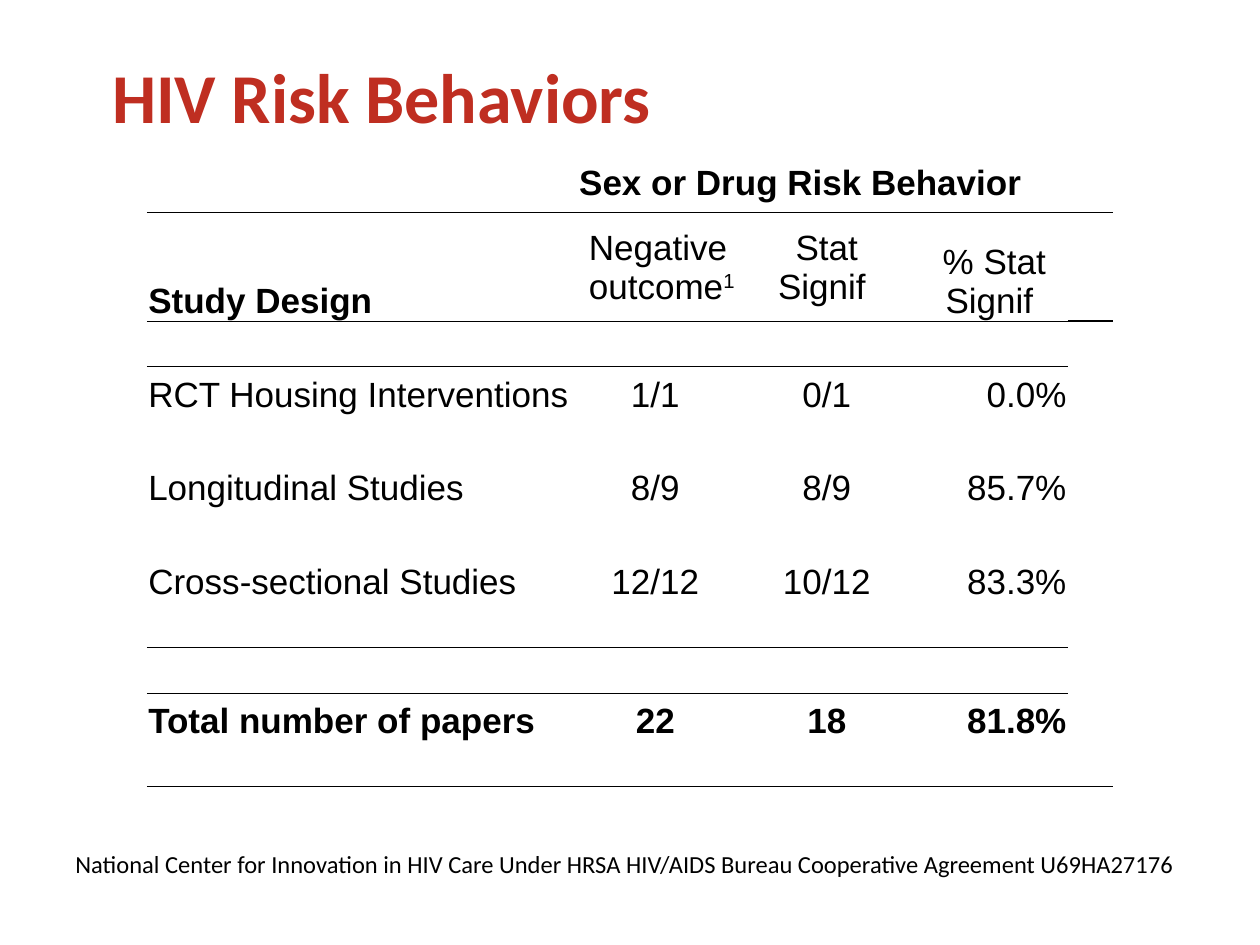
from lxml.etree import SubElement
from pptx import Presentation
from pptx.dml.color import RGBColor
from pptx.enum.text import MSO_ANCHOR as ANCHOR, PP_ALIGN as ALIGN
from pptx.oxml import parse_xml
from pptx.oxml.ns import nsdecls, qn
from pptx.util import Pt

BLACK, RED = "000000", "BF2E21"
NO_STYLE = "{2D5ABB26-0587-4C30-8999-92F81FD0307C}"
COLS = [95, 88.5, 62.75, 88.5, 9.5, 88.5, 9.5, 84, 26]
ROWS = [34.5, 62, 26, 27.5, 26, 27.5, 26, 27.5, 26, 26, 27.5, 26]
BOXES = [
    ("HIV Risk Behaviors", (57, 0, 648, 82), dict(size=40, color=RED, bold=True)),
    ("National Center for Innovation in HIV Care Under HRSA HIV/AIDS Bureau "
     "Cooperative Agreement U69HA27176", (36, 459.5, 648, 46), dict(size=14)),
]
HEADERS = [
    (0, 3, 6, ["Sex or Drug Risk Behavior"], ALIGN.LEFT, ANCHOR.MIDDLE, True),
    (1, 0, 2, ["Study Design"], ALIGN.LEFT, ANCHOR.BOTTOM, True),
    (1, 3, 2, [" Negative \v outcome"], ALIGN.LEFT, ANCHOR.MIDDLE, False),
    (1, 5, 1, ["Stat", "Signif "], ALIGN.CENTER, ANCHOR.MIDDLE, False),
    (1, 7, 1, ["% Stat", "Signif "], ALIGN.CENTER, ANCHOR.BOTTOM, False),
]
STUDIES = [
    (3, "RCT Housing Interventions", "1/1", "0/1", "0.0%"),
    (5, "Longitudinal Studies", "8/9", "8/9", "85.7%"),
    (7, "Cross-sectional Studies", "12/12", "10/12", "83.3%"),
    (10, "Total number of papers", "22", "18", "81.8%"),
]
SLOTS = [(0, 3, ALIGN.LEFT), (3, 1, ALIGN.CENTER), (5, 1, ALIGN.CENTER), (7, 1, ALIGN.RIGHT)]
RULES = [(0, 9, 1), (1, 8, 0.5), (8, 8, 0.5), (11, 9, 0.5)]


def style(r, size=20, name="Calibri", bold=False, color=BLACK):
    for key, value in dict(size=Pt(size), name=name, bold=bold).items():
        setattr(r.font, key, value)
    r.font.color.rgb = RGBColor.from_string(color)


def fill_cell(row, col, span, lines, align, anchor, bold):
    cell = table.cell(row, col)
    if span > 1:
        cell.merge(table.cell(row, col + span - 1))
    cell.vertical_anchor = anchor
    tf = cell.text_frame
    tf.text = "\n".join(lines)
    for p in tf.paragraphs:
        p.alignment = align
        for r in p.runs:
            style(r, name="Arial", bold=bold)


def add_border(cell, side, width):
    cell._tc.get_or_add_tcPr().insert(0, parse_xml(
        f'<a:{side} {nsdecls("a")} w="{Pt(width)}"><a:solidFill>'
        f'<a:srgbClr val="{BLACK}"/></a:solidFill></a:{side}>'))


prs = Presentation()
prs.slide_width, prs.slide_height = Pt(720), Pt(540)
s = prs.slides.add_slide(prs.slide_layouts[6])

for text, place, fmt in BOXES:
    tf = s.shapes.add_textbox(*map(Pt, place)).text_frame
    tf.word_wrap = True
    tf.vertical_anchor = ANCHOR.BOTTOM
    r = tf.paragraphs[0].add_run()
    r.text = text
    style(r, **fmt)

table = s.shapes.add_table(len(ROWS), len(COLS), Pt(84), Pt(87),
                           Pt(sum(COLS)), Pt(sum(ROWS))).table
table.first_row = table.horz_banding = False
props = table._tbl.tblPr
style_id = props.find(qn("a:tableStyleId"))
if style_id is None:
    style_id = SubElement(props, qn("a:tableStyleId"))
style_id.text = NO_STYLE
for column, width in zip(table.columns, COLS):
    column.width = Pt(width)
for row, height in zip(table.rows, ROWS):
    row.height = Pt(height)
for cell in table.iter_cells():
    cell.fill.background()
    for side, margin in dict(left=0.75, right=0.75, top=0.75, bottom=0).items():
        setattr(cell, f"margin_{side}", Pt(margin))

for header in HEADERS:
    fill_cell(*header)
r = table.cell(1, 3).text_frame.paragraphs[0].add_run()
r.text = "1"
style(r, name="Arial")
r.font._element.set("baseline", "30000")

for row, *values in STUDIES:
    for value, (col, span, align) in zip(values, SLOTS):
        fill_cell(row, col, span, [value], align, ANCHOR.BOTTOM, row == 10)

for side, offset in (("lnB", 0), ("lnT", 1)):
    for row, count, width in RULES:
        if row + offset < len(ROWS):
            for col in range(count):
                add_border(table.cell(row + offset, col), side, width)

prs.save("out.pptx")
